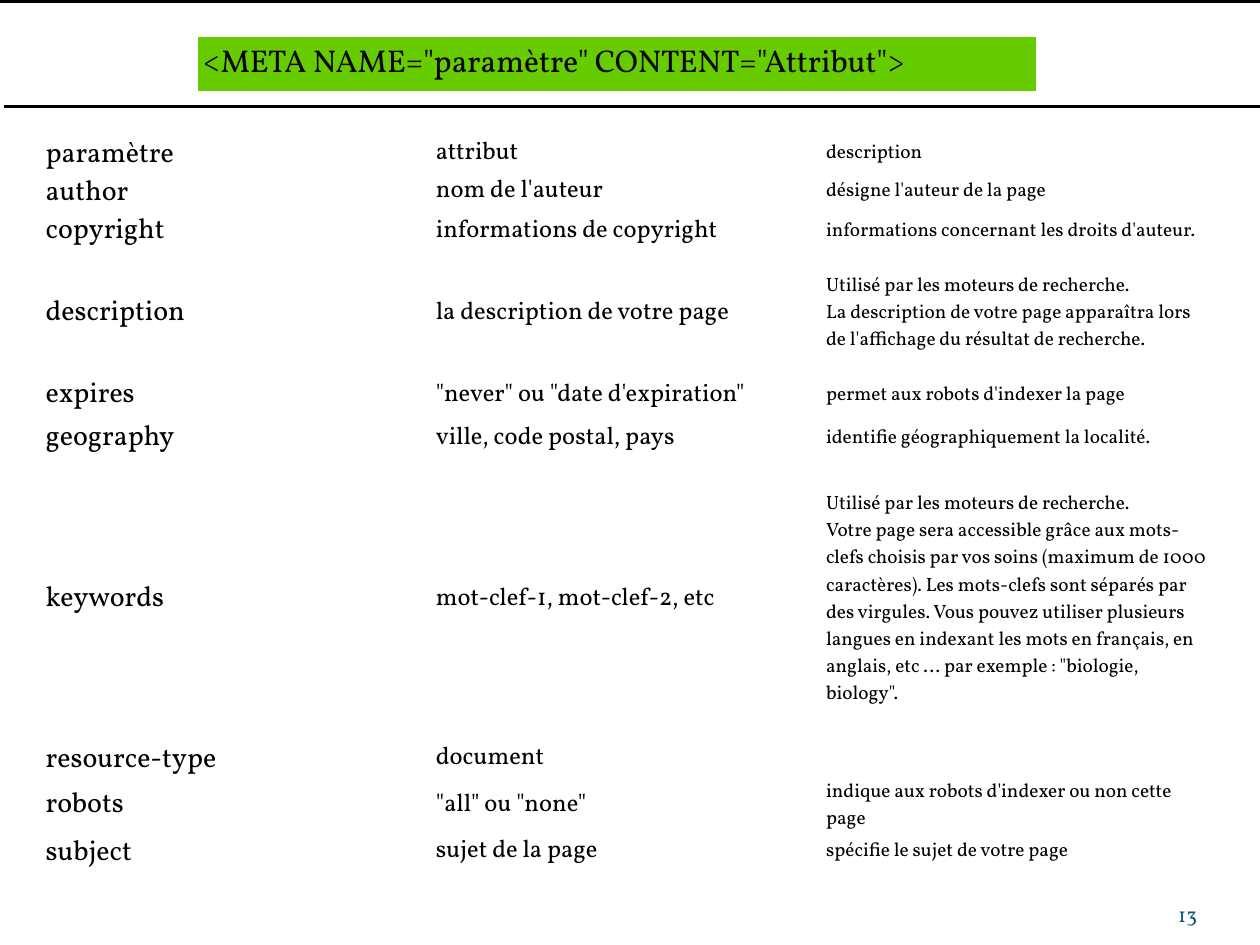
from pptx import Presentation
from pptx.dml import color
from pptx.enum import shapes, text
from pptx.util import Pt

ROWS = [
    (21.6, "paramètre", "attribut", "description"),
    (21.6, "author", "nom de l'auteur", "désigne l'auteur de la page"),
    (24.5, "copyright", "informations de copyright",
     "informations concernant les droits d'auteur."),
    (69, "description", "la description de votre page",
     "Utilisé par les moteurs de recherche.\vLa description de votre page "
     "apparaîtra lors de l'affichage du résultat de recherche."),
    (24.5, "expires", "\"never\" ou \"date d'expiration\"",
     "permet aux robots d'indexer la page"),
    (24.5, "geography", "ville, code postal, pays",
     "identifie géographiquement la localité."),
    (160, "keywords", "mot-clef-1, mot-clef-2, etc",
     "Utilisé par les moteurs de recherche.\vVotre page sera accessible grâce "
     "aux mots-clefs choisis par vos soins (maximum de 1000 caractères). Les "
     "mots-clefs sont séparés par des virgules. Vous pouvez utiliser plusieurs "
     "langues en indexant les mots en français, en anglais, etc ... par "
     "exemple : \"biologie, biology\"."),
    (21.6, "resource-type", "document", ""),
    (31.7, "robots", "\"all\" ou \"none\"",
     "indique aux robots d'indexer ou non cette page"),
    (21.6, "subject", "sujet de la page", "spécifie le sujet de votre page"),
]


def rgb(hex_string):
    return color.RGBColor.from_string(hex_string)


class SlideBuilder:
    """Holds the style and the slide being built."""
    font = "Vollkorn"
    ink = "000000"
    accent = "045D75"
    highlight = "66CC00"

    def __init__(self, slide):
        self.slide = slide

    def format_text(self, paragraph, size, ink):
        for run in paragraph.runs:
            run.font.name = self.font
            run.font.size = Pt(size)
            run.font.color.rgb = rgb(ink)
        if not paragraph.runs:  # keeps an empty cell from stretching its row
            paragraph._p.get_or_add_endParaRPr().set("sz", str(size * 100))

    def table(self, left, top, width, heights, rows, sizes, inset, fill=None):
        """Add a plain table; sizes gives the font size of each column."""
        table = self.slide.shapes.add_table(
            len(rows), len(sizes), Pt(left), Pt(top), Pt(width),
            Pt(sum(heights))).table
        table.first_row = table.horz_banding = False
        for row, height, words in zip(table.rows, heights, rows):
            row.height = Pt(height)
            for cell, content, size in zip(row.cells, words, sizes):
                cell.margin_left = cell.margin_right = Pt(inset)
                cell.margin_top = cell.margin_bottom = Pt(inset)
                cell.vertical_anchor = text.MSO_ANCHOR.MIDDLE
                if fill:
                    cell.fill.solid()
                    cell.fill.fore_color.rgb = rgb(fill)
                else:
                    cell.fill.background()
                cell.text_frame.text = content
                self.format_text(cell.text_frame.paragraphs[0], size, self.ink)

    def rule(self, left, top):
        """Add a thin black bar as wide as the slide."""
        shape = self.slide.shapes.add_shape(
            shapes.MSO_SHAPE.RECTANGLE, Pt(left), Pt(top), Pt(720), Pt(1.25))
        shape.shadow.inherit = False
        shape.fill.solid()
        shape.fill.fore_color.rgb = rgb(self.ink)
        shape.line.color.rgb = rgb(self.ink)
        shape.line.width = Pt(0.75)

    def page_number(self, number):
        shape = self.slide.shapes.add_textbox(Pt(624), Pt(500.5), Pt(60), Pt(29))
        frame = shape.text_frame
        frame.word_wrap = True
        frame.margin_left = frame.margin_right = 0
        frame.margin_top = frame.margin_bottom = 0
        frame.vertical_anchor = text.MSO_ANCHOR.BOTTOM
        frame.text = str(number)
        paragraph = frame.paragraphs[0]
        paragraph.alignment = text.PP_ALIGN.RIGHT
        self.format_text(paragraph, 12, self.accent)


def main():
    presentation = Presentation()
    presentation.slide_width, presentation.slide_height = Pt(720), Pt(540)
    slide = presentation.slides.add_slide(presentation.slide_layouts[6])
    builder = SlideBuilder(slide)
    builder.page_number(13)
    builder.table(112.5, 20.7, 480, [32], [
        ("<META NAME=\"paramètre\" CONTENT=\"Attribut\">",)],
        [18], 3.6, builder.highlight)
    builder.table(25.4, 77, 669, [row[0] for row in ROWS],
                  [row[1:] for row in ROWS], [16, 14, 11], 0.72)
    builder.rule(0, 0)
    builder.rule(2.5, 60.2)
    presentation.save("out.pptx")


if __name__ == "__main__":
    main()
